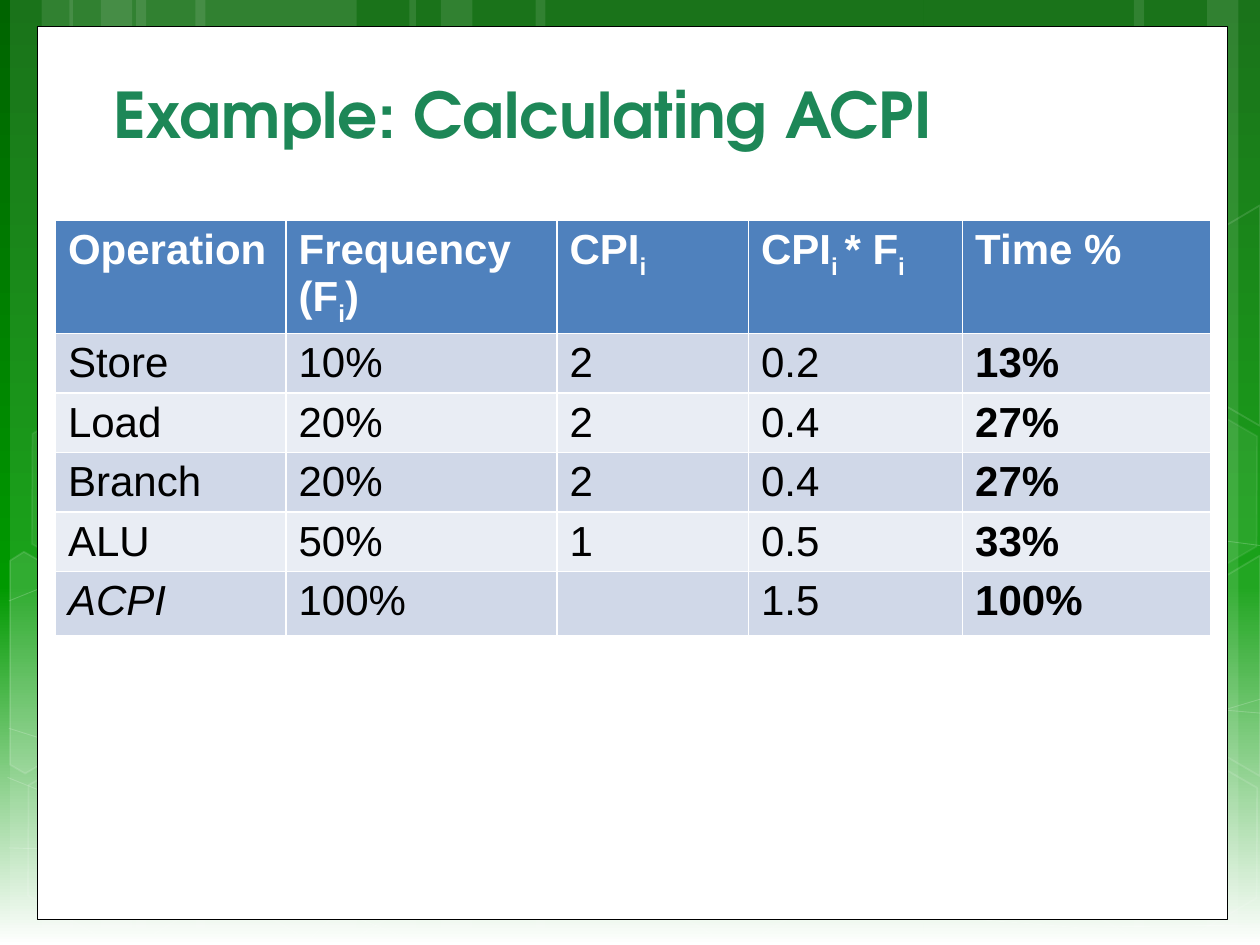
import copy

import pptx
import pptx.dml.color
import pptx.enum.shapes
import pptx.enum.text
import pptx.oxml
import pptx.oxml.ns
import pptx.util

Inches = pptx.util.Inches
Pt = pptx.util.Pt
RGBColor = pptx.dml.color.RGBColor
SHAPE = pptx.enum.shapes.MSO_SHAPE
qn = pptx.oxml.ns.qn

WHITE = RGBColor(0xFF, 0xFF, 0xFF)
BLACK = RGBColor(0, 0, 0)
DARK = RGBColor(0x00, 0x64, 0x00)
GREEN = RGBColor(0x00, 0x99, 0x00)
TEAL = RGBColor(0x1D, 0x87, 0x57)
BLUE = RGBColor(0x4F, 0x81, 0xBD)
BANDS = (RGBColor(0xE9, 0xED, 0xF4), RGBColor(0xD0, 0xD8, 0xE8))

STRIPES = [
    (1.08, 1.75), (0.08, 0.5), (0.33, 0.83), (1.55, 1.75), (0.55, 0.5), (0.8, 0.83),
    (7.33, 1.75), (9.58, 0.42), (9, 0.83), (4.25, 3.08), (3.25, 0.5), (3.5, 0.83),
]
CURVES = [
    [(0.07, 6.73), (1.9, 6.78), (4.58, 6.65), (7.92, 6.17), (10, 5.55)],
    [(0.07, 4.77), (1.21, 4.31), (3.47, 3.87), (6.54, 3.87), (10, 4.33)],
    [(0.06, 6.17), (3.34, 7.49)],
    [(0.07, 5.78), (1.28, 6.16), (3.57, 6.73), (6.28, 7.18), (8.53, 7.36), (10, 7.34)],
    [(2.42, 7.49), (3.02, 6.91), (3.88, 6.39), (4.7, 6.09), (6.08, 5.78),
     (6.8, 5.69), (7.94, 5.62), (9.53, 5.62), (10, 5.66)],
]
HEXES = [
    (4.97, 5.89, 6, 12), (0.11, 5.91, 0, 12), (0.14, 3.12, 7, 8),
    (1.74, 5.92, 0, 12), (8.34, 5.93, 0, 12), (8.34, 3.14, 7, 8),
]
CUTS = [
    ([(0.08, 4.45), (0.19, 4.38), (0.96, 4.82), (0.95, 5.7), (0.2, 6.14), (0.08, 6.07)], 10),
    ([(9.26, 4.85), (10, 4.41), (10, 6.16), (9.26, 5.73)], 4),
    ([(9.26, 2.07), (10, 1.63), (10, 3.38), (9.26, 2.95)], 0),
]
HEADS = ["Operation", "Frequency (F_i_)", "CPI_i_", "CPI_i _* F_i_", "Time %"]
ROWS = [
    ["Store", "10%", "2", "0.2", "13%"],
    ["Load", "20%", "2", "0.4", "27%"],
    ["Branch", "20%", "2", "0.4", "27%"],
    ["ALU", "50%", "1", "0.5", "33%"],
    ["ACPI", "100%", "", "1.5", "100%"],
]
WIDTHS = [1.83, 2.15, 1.52, 1.7, 1.97]


def fade(fill, share):
    color = fill._xPr.find(".//" + qn("a:srgbClr"))
    pptx.oxml.ns.qn("a:alpha")
    alpha = color.makeelement(qn("a:alpha"), {"val": str(share * 1000)})
    color.append(alpha)


def tint(shape, share=0, edge=0, width=1):
    shape.shadow.inherit = False
    if share:
        shape.fill.solid()
        shape.fill.fore_color.rgb = WHITE
        fade(shape.fill, share)
    else:
        shape.fill.background()
    if edge:
        shape.line.color.rgb = WHITE
        shape.line.width = Pt(width)
        fade(shape.line.fill, edge)
    else:
        shape.line.fill.background()


def trace(slide, points, close):
    spots = [(Inches(x), Inches(y)) for x, y in points]
    form = slide.shapes.build_freeform(*spots[0])
    form.add_line_segments(spots[1:], close=close)
    return form.convert_to_shape()


def add_back(slide, box):
    left, top, width, height = box
    fill = slide.background.fill
    fill.gradient()
    fill.gradient_angle = 270
    first, last = fill.gradient_stops
    first.color.rgb, first.position = DARK, 0
    last.color.rgb, last.position = GREEN, 0.62
    stops = slide.element.find(".//" + qn("a:gsLst"))
    stops.append(copy.deepcopy(stops[-1]))
    end = fill.gradient_stops[2]
    end.color.rgb, end.position = WHITE, 1

    for x, wide in STRIPES:
        stripe = slide.shapes.add_shape(
            SHAPE.RECTANGLE, left + Inches(x), top, Inches(wide), height)
        tint(stripe, 10)
    for points in CURVES:
        tint(trace(slide, points, False), edge=20, width=0.5)
    for x, y, share, edge in HEXES:
        hexa = slide.shapes.add_shape(
            SHAPE.HEXAGON, left + Inches(x), top + Inches(y), Inches(1.75), Inches(1.52))
        hexa.adjustments[0] = 0.285
        hexa.rotation = 30
        tint(hexa, share, edge)
    for points, share in CUTS:
        tint(trace(slide, points, True), share, 12)


def add_panel(slide, box):
    panel = slide.shapes.add_shape(SHAPE.RECTANGLE, *box)
    panel.shadow.inherit = False
    panel.fill.solid()
    panel.fill.fore_color.rgb = WHITE
    panel.line.color.rgb = BLACK
    panel.line.width = Pt(0.5)


def add_title(slide, box):
    title = slide.shapes.title
    title.left, title.top, title.width, title.height = box
    slide.shapes._spTree.append(title.element)
    frame = title.text_frame
    frame.text = "Example: Calculating ACPI"
    frame.vertical_anchor = pptx.enum.text.MSO_ANCHOR.BOTTOM
    para = frame.paragraphs[0]
    para.alignment = pptx.enum.text.PP_ALIGN.LEFT
    font = para.runs[0].font
    font.name, font.size, font.bold = "TeX Gyre Adventor", Pt(36), True
    font.color.rgb = TEAL


def fill_cell(cell, text, row, col):
    cell.fill.solid()
    cell.fill.fore_color.rgb = BANDS[row % 2] if row else BLUE
    para = cell.text_frame.paragraphs[0]
    para.font.size = Pt(24)
    for place, part in enumerate(text.split("_")):
        if not part:
            continue
        run = para.add_run()
        run.text = part
        font = run.font
        font.name, font.size = "Arial", Pt(24)
        font.bold = row == 0 or col == 4
        font.italic = text == "ACPI"
        font.color.rgb = BLACK if row else WHITE
        if place % 2:
            font._element.set("baseline", "-25000")


def add_grid(slide, box):
    data = [HEADS] + ROWS
    table = slide.shapes.add_table(len(data), len(HEADS), *box).table
    for col, width in zip(table.columns, WIDTHS):
        col.width = Inches(width)
    for r, texts in enumerate(data):
        table.rows[r].height = Inches(0.47 if r else 0.89)
        for c, text in enumerate(texts):
            fill_cell(table.cell(r, c), text, r, c)


def main():
    deck = pptx.Presentation()
    deck.slide_width, deck.slide_height = Inches(10), Inches(7.5)
    slide = deck.slides.add_slide(deck.slide_layouts[5])
    add_back(slide, (0, 0, deck.slide_width, deck.slide_height))
    add_panel(slide, (Inches(0.3), Inches(0.21), Inches(9.44), Inches(7.09)))
    add_title(slide, (Inches(0.8), Inches(0.49), Inches(8.42), Inches(0.76)))
    add_grid(slide, (Inches(0.44), Inches(1.75), Inches(9.17), Inches(3.24)))
    deck.save("out.pptx")


if __name__ == "__main__":
    main()
